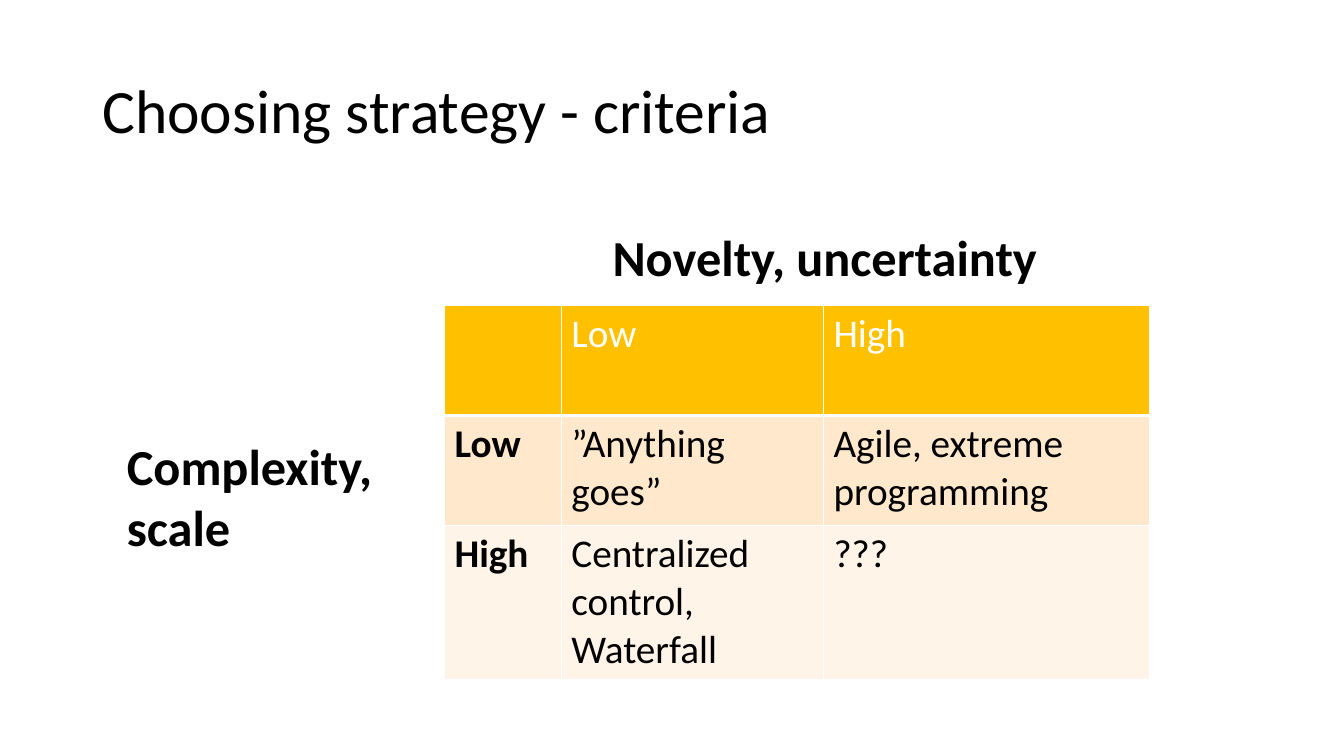
from lxml import etree
from pptx import Presentation
from pptx.dml.color import RGBColor
from pptx.enum.text import MSO_ANCHOR as ANCHOR
from pptx.oxml.ns import qn
from pptx.util import Pt

COLORS = {"text": "000000", "white": "FFFFFF", "header": "FFC000",
          "low": "FFE8CC", "high": "FFF4E7"}
FONT = "Calibri"
CRITERIA = [
    ("header", ["", "Low", "High"]),
    ("low", ["Low", "”Anything goes”", "Agile, extreme programming"]),
    ("high", ["High", "Centralized control, Waterfall", "???"]),
]
COL_WIDTHS = [83.5, 187.2, 233.3]
ROW_HEIGHTS = [78.5, 78.5, 110]


def rgb(name):
    return RGBColor.from_string(COLORS[name])


def style(p, size, color="text", bold=False):
    p.font.name = FONT
    p.font.size = Pt(size)
    p.font.bold = bold
    p.font.color.rgb = rgb(color)


def add_text(s, box, lines, size, bold=False, wrap=False, anchor=ANCHOR.TOP, spacing=1):
    tf = s.shapes.add_textbox(*map(Pt, box)).text_frame
    tf.word_wrap = wrap
    tf.vertical_anchor = anchor
    for i, line in enumerate(lines):
        p = tf.add_paragraph() if i else tf.paragraphs[0]
        p.text = line
        p.line_spacing = spacing
        style(p, size, bold=bold)


def set_borders(cell, bottom):
    tcPr = cell._tc.get_or_add_tcPr()
    widths = {"a:lnL": 1, "a:lnR": 1, "a:lnT": 1, "a:lnB": bottom}
    # Borders come before the fill in the cell properties
    for i, (tag, width) in enumerate(widths.items()):
        ln = etree.Element(qn(tag), w=str(Pt(width)))
        fill = etree.SubElement(ln, qn("a:solidFill"))
        etree.SubElement(fill, qn("a:srgbClr"), val=COLORS["white"])
        tcPr.insert(i, ln)


def add_criteria_table(s, left, top):
    size = map(Pt, (left, top, sum(COL_WIDTHS), sum(ROW_HEIGHTS)))
    table = s.shapes.add_table(len(ROW_HEIGHTS), len(COL_WIDTHS), *size).table
    for col, width in zip(table.columns, COL_WIDTHS):
        col.width = Pt(width)
    for r, (fill, texts) in enumerate(CRITERIA):
        table.rows[r].height = Pt(ROW_HEIGHTS[r])
        for c, text in enumerate(texts):
            cell = table.cell(r, c)
            cell.fill.solid()
            cell.fill.fore_color.rgb = rgb(fill)
            set_borders(cell, bottom=1 if r else 3)
            p = cell.text_frame.paragraphs[0]
            p.text = text
            style(p, 28, "text" if r else "white", bold=r > 0 and c == 0)


def add_matrix(s, left, top):
    # Table with one axis label above and one to its left
    add_criteria_table(s, left, top)
    add_text(s, (left + 113, top - 60.5, 321, 51), ["Novelty, uncertainty"], 36, bold=True)
    add_text(s, (left - 234, top + 89.3, 191.5, 94.3), ["Complexity,", "scale"], 36, bold=True)


def main():
    prs = Presentation()
    prs.slide_width, prs.slide_height = Pt(960), Pt(540)
    s = prs.slides.add_slide(prs.slide_layouts[6])
    # Title
    add_text(s, (66, 28.8, 828, 104.4), ["Choosing strategy - criteria"], 44,
             wrap=True, anchor=ANCHOR.MIDDLE, spacing=0.9)
    # Strategy matrix
    add_matrix(s, 317.5, 218.2)
    prs.save("out.pptx")


if __name__ == "__main__":
    main()
